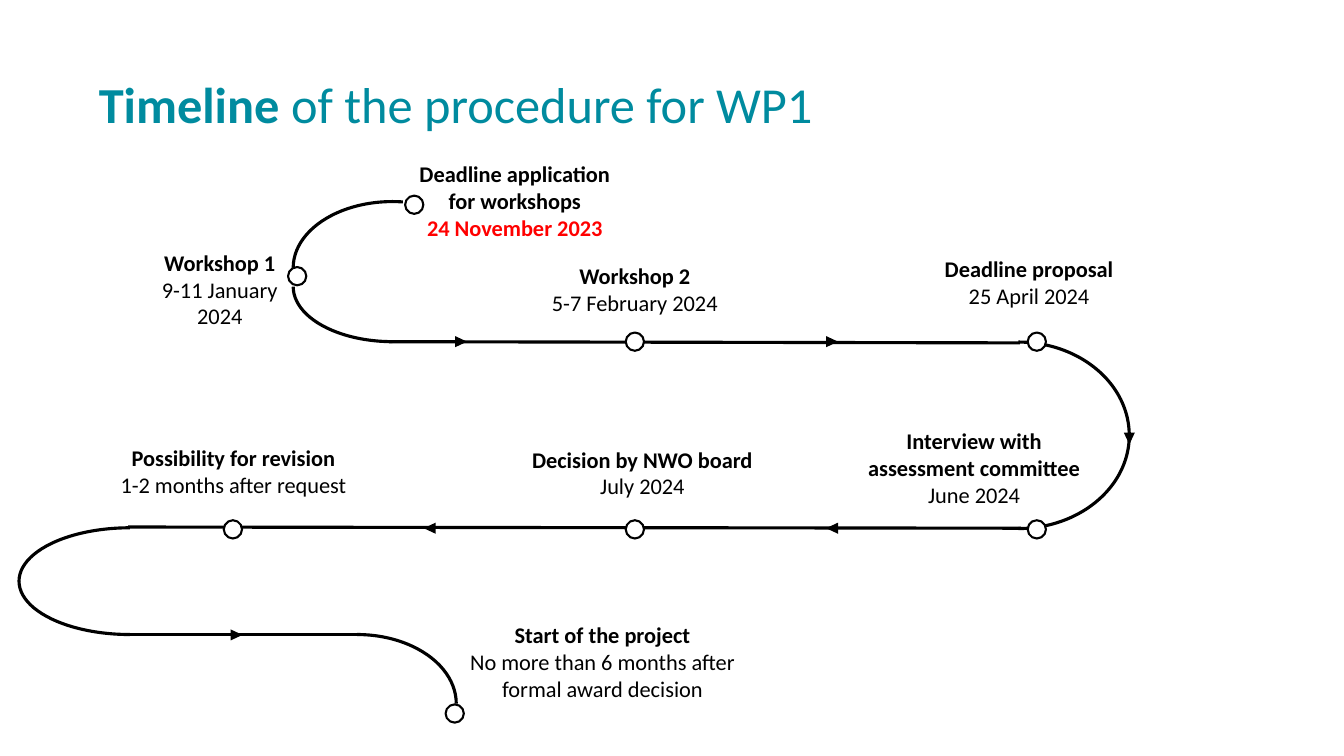
"""Build the slide with the winding timeline of the WP1 procedure."""
import pptx
import pptx.dml.color
import pptx.enum.shapes
import pptx.enum.text
import pptx.oxml
import pptx.util

Cm = pptx.util.Cm
Pt = pptx.util.Pt
RGBColor = pptx.dml.color.RGBColor
Shape = pptx.enum.shapes.MSO_SHAPE
Align = pptx.enum.text.PP_ALIGN

TEAL = RGBColor(0x00, 0x8B, 0x9F)
BLACK = RGBColor(0x00, 0x00, 0x00)
WHITE = RGBColor(0xFF, 0xFF, 0xFF)
RED = RGBColor(0xFF, 0x00, 0x00)
FONT = "Calibri"

deck = pptx.Presentation()
deck.slide_width = Cm(33.87)
deck.slide_height = Cm(19.05)
page = deck.slides.add_slide(deck.slide_layouts[5])


def add_figure(kind, left, top, width, height, fill=None, line_width=None):
    figure = page.shapes.add_shape(kind, Cm(left), Cm(top), Cm(width), Cm(height))
    figure.shadow.inherit = False
    if fill is None:
        figure.fill.background()
    else:
        figure.fill.solid()
        figure.fill.fore_color.rgb = fill
    if line_width is None:
        figure.line.fill.background()
    else:
        figure.line.color.rgb = BLACK
        figure.line.width = Pt(line_width)
    return figure


def clear_frame(frame):
    frame.word_wrap = True
    frame.auto_size = pptx.enum.text.MSO_AUTO_SIZE.NONE
    frame.vertical_anchor = pptx.enum.text.MSO_ANCHOR.TOP
    frame.margin_left = frame.margin_right = 0
    frame.margin_top = frame.margin_bottom = 0


title = page.shapes.title
title.left, title.top, title.width, title.height = Cm(2.49), Cm(2.01), Cm(26.01), Cm(1.5)
clear_frame(title.text_frame)
para = title.text_frame.paragraphs[0]
para.alignment = Align.LEFT
para.line_spacing = 0.9
para.font.name = FONT
para.font.size = Pt(36)
para.font.color.rgb = TEAL
for words, bold in [("Timeline ", True), ("of the procedure for WP1", False)]:
    span = para.add_run()
    span.text = words
    span.font.bold = bold

bends = [
    (22.87, 8.62, 5.59, 4.7, 270, 0),
    (22.87, 8.62, 5.59, 4.7, 0, 90),
    (7.39, 5.84, 5, 2.77, 90, 180),
    (7.39, 5.08, 5, 3.33, 180, 279.1),
    (0.48, 13.3, 5.59, 2.69, 90, 180),
    (0.48, 13.3, 5.59, 2.69, 180, 270),
    (6.5, 15.99, 5, 3.48, 270, 0),
]
for left, top, width, height, start, end in bends:
    bend = add_figure(Shape.ARC, left, top, width, height, line_width=2.25)
    bend.adjustments[0] = start * 0.6
    bend.adjustments[1] = end * 0.6

tracks = [
    (25.7, 8.64, 9.8, 8.61),
    (25.73, 13.31, 3.23, 13.28),
    (8.99, 15.98, 3.23, 15.98),
]
for track in tracks:
    line = page.shapes.add_connector(
        pptx.enum.shapes.MSO_CONNECTOR.STRAIGHT, *[Cm(value) for value in track])
    line.line.color.rgb = BLACK
    line.line.width = Pt(2.25)
    properties = line.element.spPr
    properties.append(properties.makeelement(pptx.oxml.ns.qn("a:effectLst"), {}))

stops = [(5.64 + 10.13 * column, 13.11) for column in range(3)]
stops += [(5.64 + 10.13 * column, 8.38) for column in (1, 2)]
stops += [(11.23, 17.75), (7.26, 6.73), (10.21, 4.93)]
for left, top in stops:
    add_figure(Shape.OVAL, left, top, 0.46, 0.46, WHITE, 1.5)

arrows = [
    (11.48, 8.46, 90),
    (20.83, 8.46, 90),
    (28.32, 10.9, 180),
    (20.83, 13.16, 270),
    (10.69, 13.16, 270),
    (5.82, 15.85, 90),
]
for left, top, turn in arrows:
    arrow = add_figure(Shape.ISOSCELES_TRIANGLE, left, top, 0.28, 0.3, BLACK)
    arrow.rotation = turn

milestones = [
    (10.46, 4.04, 5.03, "Deadline application for workshops", "24 November 2023", True),
    (3.76, 6.27, 3.56, "Workshop 1", "9-11 January 2024", False),
    (13.46, 6.6, 5.08, "Workshop 2", "5-7 February 2024", False),
    (23.42, 6.43, 5.03, "Deadline proposal", "25 April 2024", False),
    (21.87, 10.77, 5.36, "Interview with assessment committee", "June 2024", False),
    (13.28, 11.23, 5.82, "Decision by NWO board", "July 2024", False),
    (3, 11.2, 5.77, "Possibility for revision", "1-2 months after request", False),
    (11.73, 15.65, 6.91, "Start of the project",
     "No more than 6 months after formal award decision", False),
]
for left, top, width, heading, moment, urgent in milestones:
    box = page.shapes.add_textbox(Cm(left), Cm(top), Cm(width), Cm(1.52))
    frame = box.text_frame
    clear_frame(frame)
    frame.text = heading + "\n" + moment
    styles = [(True, BLACK), (urgent, RED if urgent else BLACK)]
    for para, (bold, color) in zip(frame.paragraphs, styles):
        para.alignment = Align.CENTER
        para.font.name = FONT
        para.font.size = Pt(16)
        para.font.bold = bold
        para.font.color.rgb = color

deck.save("out.pptx")
